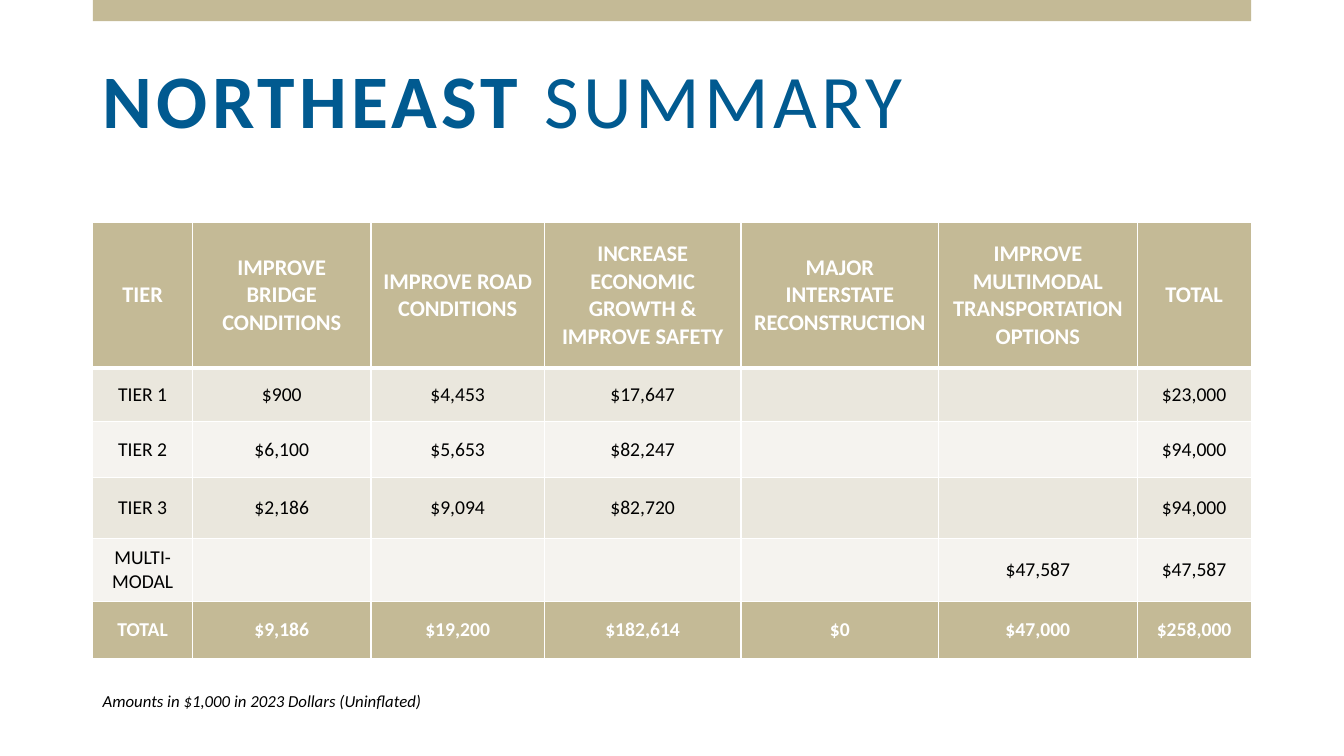
from pptx import Presentation
from pptx.dml.color import RGBColor
from pptx.enum.shapes import MSO_SHAPE as Shape
from pptx.enum.text import MSO_ANCHOR as Anchor, MSO_AUTO_SIZE as AutoSize, PP_ALIGN as Align
from pptx.oxml import parse_xml
from pptx.oxml.ns import nsdecls
from pptx.util import Pt

EMU_PER_PX = 9144  # 100 px to the inch
TITLE_ONLY = 5

SAND = RGBColor(0xC4, 0xBA, 0x96)
BAND_DARK = RGBColor(0xEA, 0xE7, 0xDD)
BAND_LIGHT = RGBColor(0xF5, 0xF3, 0xEF)
BLUE = RGBColor(0x01, 0x5A, 0x90)
BLACK = RGBColor(0, 0, 0)
WHITE = RGBColor(0xFF, 0xFF, 0xFF)

LEFT, WIDTH = 92, 1149
COLUMN_WIDTHS = [99, 177, 172, 195, 196, 197, 113]
ROW_HEIGHTS = [144, 53, 56, 60, 63, 56]
SUMMARY = [
    ["TIER", "IMPROVE BRIDGE CONDITIONS", "IMPROVE ROAD CONDITIONS",
     "INCREASE ECONOMIC GROWTH & IMPROVE SAFETY", "MAJOR INTERSTATE RECONSTRUCTION",
     "IMPROVE MULTIMODAL TRANSPORTATION OPTIONS", "TOTAL"],
    ["TIER 1", "$900", "$4,453", "$17,647", "", "", "$23,000"],
    ["TIER 2", "$6,100", "$5,653", "$82,247", "", "", "$94,000"],
    ["TIER 3", "$2,186", "$9,094", "$82,720", "", "", "$94,000"],
    ["MULTI-MODAL", "", "", "", "", "$47,587", "$47,587"],
    ["TOTAL", "$9,186", "$19,200", "$182,614", "$0", "$47,000", "$258,000"],
]


def px(*lengths):
    return [length * EMU_PER_PX for length in lengths]


def add_span(para, text, size, color, font, bold=False, italic=False, spacing=0):
    """Append a run; spacing is the letter spacing in points."""
    span = para.add_run()
    span.text = text
    span.font.name, span.font.size = font, Pt(size)
    span.font.bold, span.font.italic = bold, italic
    span.font.color.rgb = color
    if spacing:
        span.font._element.set("spc", str(spacing * 100))


def add_borders(cell, bottom):
    """Draw white cell borders, 1 pt wide except for the bottom one."""
    for side, points in {"L": 1, "R": 1, "T": 1, "B": bottom}.items():
        cell._tc.get_or_add_tcPr().append(parse_xml(
            f'<a:ln{side} {nsdecls("a")} w="{Pt(points)}"><a:solidFill>'
            f'<a:srgbClr val="{WHITE}"/></a:solidFill></a:ln{side}>'))


class SlideBuilder:
    def __init__(self, deck, font):
        self.page = deck.slides.add_slide(deck.slide_layouts[TITLE_ONLY])
        self.font = font

    def bar(self, left, top, width, height, color):
        box = self.page.shapes.add_shape(Shape.RECTANGLE, *px(left, top, width, height))
        box.shadow.inherit = False
        box.fill.solid()
        box.fill.fore_color.rgb = color
        box.line.fill.background()

    def title(self, left, top, width, height, strong, plain):
        box = self.page.shapes.title
        box.left, box.top, box.width, box.height = px(left, top, width, height)
        frame = box.text_frame
        frame.vertical_anchor = Anchor.MIDDLE
        frame.auto_size = AutoSize.NONE
        para = frame.paragraphs[0]
        para.alignment, para.line_spacing = Align.LEFT, 0.9
        for text, bold in [(strong, True), (plain, False)]:
            add_span(para, text, 54, BLUE, self.font, bold=bold, spacing=3)

    def table(self, left, top, widths, heights, rows):
        size = px(left, top, sum(widths), sum(heights))
        table = self.page.shapes.add_table(len(rows), len(widths), *size).table
        for column, width in zip(table.columns, px(*widths)):
            column.width = width
        for row, height in zip(table.rows, px(*heights)):
            row.height = height
        last = len(rows) - 1
        for r, values in enumerate(rows):
            is_header, is_strong = r == 0, r in (0, last)
            fill = SAND if is_strong else BAND_DARK if r % 2 else BAND_LIGHT
            for c, text in enumerate(values):
                cell = table.cell(r, c)
                add_borders(cell, bottom=3 if is_header else 1)
                cell.fill.solid()
                cell.fill.fore_color.rgb = fill
                cell.vertical_anchor = Anchor.MIDDLE
                if not is_header and c > 0:
                    cell.margin_left = cell.margin_right = 0
                    cell.margin_top = cell.margin_bottom = 0
                if text:
                    para = cell.text_frame.paragraphs[0]
                    para.alignment = Align.CENTER
                    add_span(para, text, 16 if is_header else 14,
                             WHITE if is_strong else BLACK, self.font, bold=is_strong)

    def note(self, left, top, width, height, text):
        box = self.page.shapes.add_textbox(*px(left, top, width, height))
        box.text_frame.word_wrap = True
        add_span(box.text_frame.paragraphs[0], text, 12, BLACK, self.font, italic=True)


def main():
    deck = Presentation()
    deck.slide_width, deck.slide_height = px(1333, 750)
    slide = SlideBuilder(deck, "Calibri")
    slide.bar(LEFT, 0, WIDTH, 21, SAND)
    slide.title(LEFT, 32, WIDTH, 143, "NORTHEAST ", "SUMMARY")
    slide.table(LEFT, 221, COLUMN_WIDTHS, ROW_HEIGHTS, SUMMARY)
    slide.note(LEFT, 680, 536, 30, "Amounts in $1,000 in 2023 Dollars (Uninflated)")
    deck.save("out.pptx")


if __name__ == "__main__":
    main()
